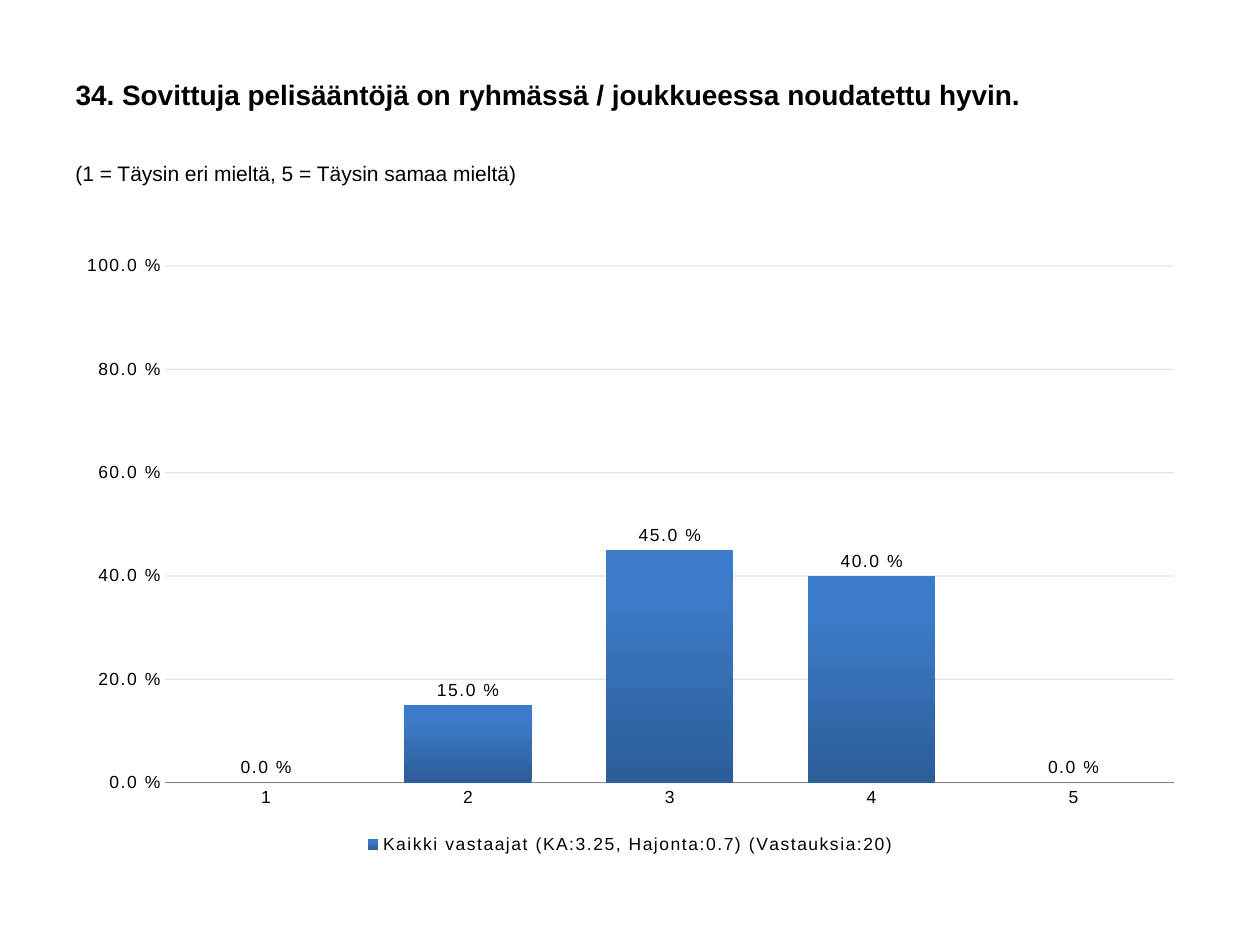
from lxml import etree
from pptx import Presentation
from pptx.chart.data import CategoryChartData as Data
from pptx.dml.color import RGBColor
from pptx.enum.chart import XL_CHART_TYPE as Kind, XL_LABEL_POSITION as Spot
from pptx.enum.chart import XL_LEGEND_POSITION as Side, XL_TICK_MARK as Tick
from pptx.enum.text import MSO_ANCHOR as Anchor, PP_ALIGN as Align
from pptx.oxml import parse_xml
from pptx.oxml.ns import nsdecls, qn
from pptx.util import Cm, Pt


def style(font, size, color="000000", bold=False):
    font.name, font.size, font.bold = "Arial", Pt(size), bold
    font.color.rgb = RGBColor.from_string(color)


deck = Presentation()
deck.slide_width, deck.slide_height = Cm(25.4), Cm(19.05)
slide = deck.slides.add_slide(deck.slide_layouts[5])
left, width = Cm(1.27), Cm(22.86)

# Title
title = slide.shapes.title
title.left, title.top, title.width, title.height = left, Cm(0.91), width, Cm(2)
title.text_frame.text = "34. Sovittuja pelisääntöjä on ryhmässä / joukkueessa noudatettu hyvin."
title.text_frame.vertical_anchor = Anchor.MIDDLE
para = title.text_frame.paragraphs[0]
para.alignment = Align.LEFT
style(para.font, 16, bold=True)

# Scale note
note = slide.shapes.add_textbox(left, Cm(3.12), width, Cm(1.5)).text_frame
note.word_wrap = True
note.text = "(1 = Täysin eri mieltä, 5 = Täysin samaa mieltä)"
para = note.paragraphs[0]
para.space_before = Pt(2.4)
style(para.font, 12)

# Chart
form = r"0.0\ %"
data = Data(number_format=form)
data.categories = ["1", "2", "3", "4", "5"]
data.add_series("Kaikki vastaajat (KA:3.25, Hajonta:0.7) (Vastauksia:20)",
                [0, 0.15, 0.45, 0.4, 0])
chart = slide.shapes.add_chart(Kind.COLUMN_CLUSTERED, left, Cm(4.93),
                               width, Cm(12.4), data).chart
chart.has_title = False
style(chart.font, 10)
plot = chart.plots[0]
plot.gap_width, plot.vary_by_categories = 58, False

# Axes
cats, vals = chart.category_axis, chart.value_axis
for axis in (cats, vals):
    axis.major_tick_mark = axis.minor_tick_mark = Tick.NONE
    style(axis.tick_labels.font, 10)
cats.format.line.color.rgb = RGBColor.from_string("868686")
cats.format.line.width = Pt(0.75)
vals.minimum_scale, vals.maximum_scale, vals.major_unit = 0, 1, 0.2
vals.tick_labels.number_format = form
vals.tick_labels.number_format_is_linked = False
vals.format.line.fill.background()

# Faint grid lines
grid = vals.major_gridlines.format.line
grid.width = Pt(0.75)
grid.color.rgb = RGBColor.from_string("4F81BD")
tint = vals.major_gridlines.format.line.color
for clr in chart.element.iterfind(".//" + qn("c:majorGridlines") + "//" + qn("a:srgbClr")):
    etree.SubElement(clr, qn("a:alpha"), val="20000")

# Value labels and legend
plot.has_data_labels = True
labels = plot.data_labels
labels.show_value = True
labels.position = Spot.OUTSIDE_END
labels.number_format, labels.number_format_is_linked = form, False
style(labels.font, 10)
chart.has_legend = True
legend = chart.legend
legend.position, legend.include_in_layout = Side.BOTTOM, False
style(legend.font, 10)

# Letter spacing in all chart text
for props in chart.element.iter(qn("a:defRPr")):
    props.set("spc", "100")

# Column gradient, dark at the foot
fill = plot.series[0].format.fill
fill.gradient()
fill.gradient_angle = 90
stops = chart.element.find(".//" + qn("c:ser") + "//" + qn("a:gsLst"))
for stop in list(stops):
    stops.remove(stop)
for pos, color in ((0, "2C5D98"), (80, "3C7BC7"), (100, "3A7CCB")):
    stop = etree.SubElement(stops, qn("a:gs"), pos=str(pos * 1000))
    etree.SubElement(stop, qn("a:srgbClr"), val=color)

# Plot area place, as shares of the chart
area = chart.element.find(".//" + qn("c:plotArea"))
for old in area.findall(qn("c:layout")):
    area.remove(old)
layout = parse_xml(f"<c:layout {nsdecls('c')}><c:manualLayout/></c:layout>")
for tag, val in (("layoutTarget", "inner"), ("xMode", "edge"), ("yMode", "edge"),
                 ("x", "0.09"), ("y", "0.035"), ("w", "0.89"), ("h", "0.84")):
    etree.SubElement(layout[0], qn("c:" + tag), val=val)
area.insert(0, layout)

deck.save("out.pptx")
